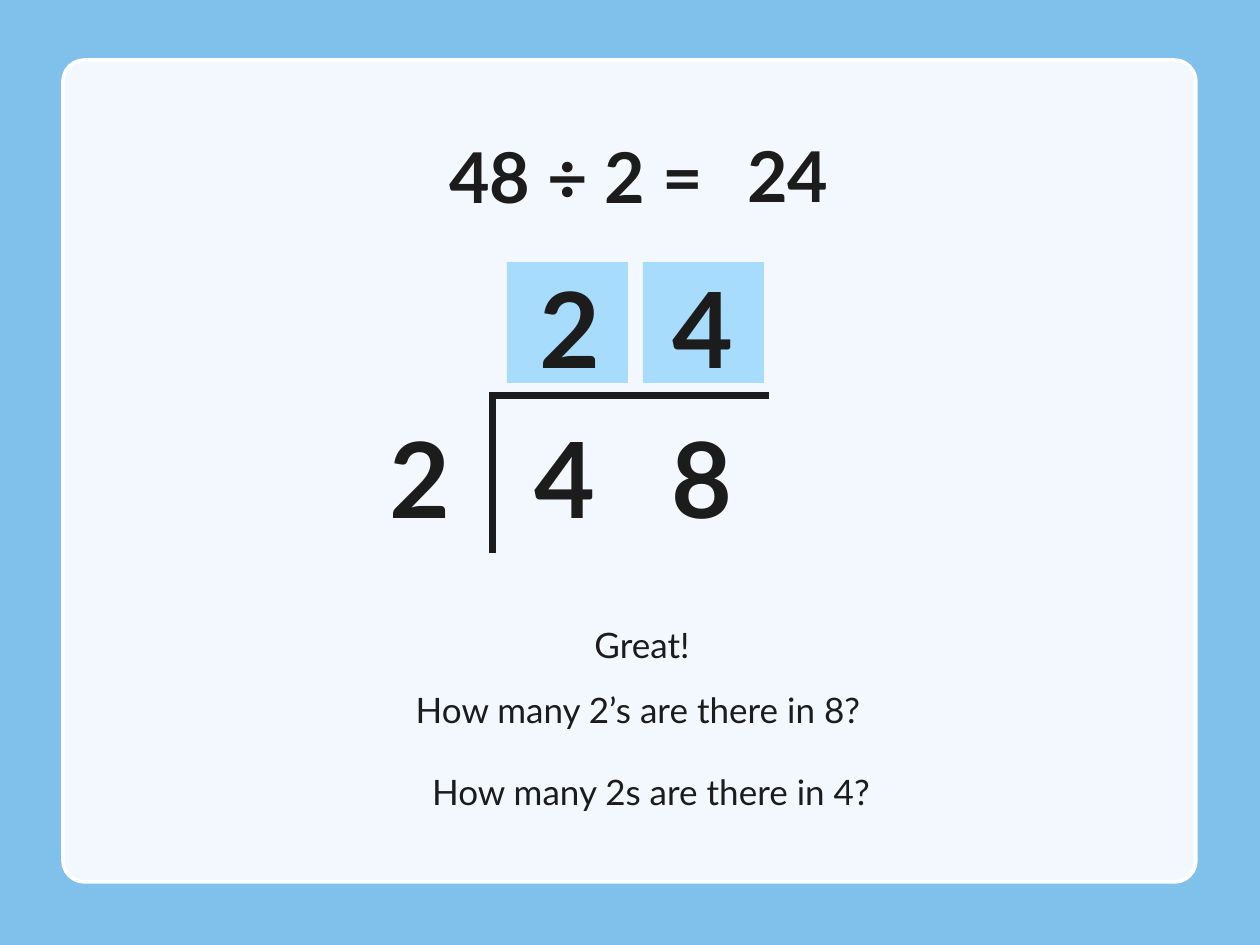
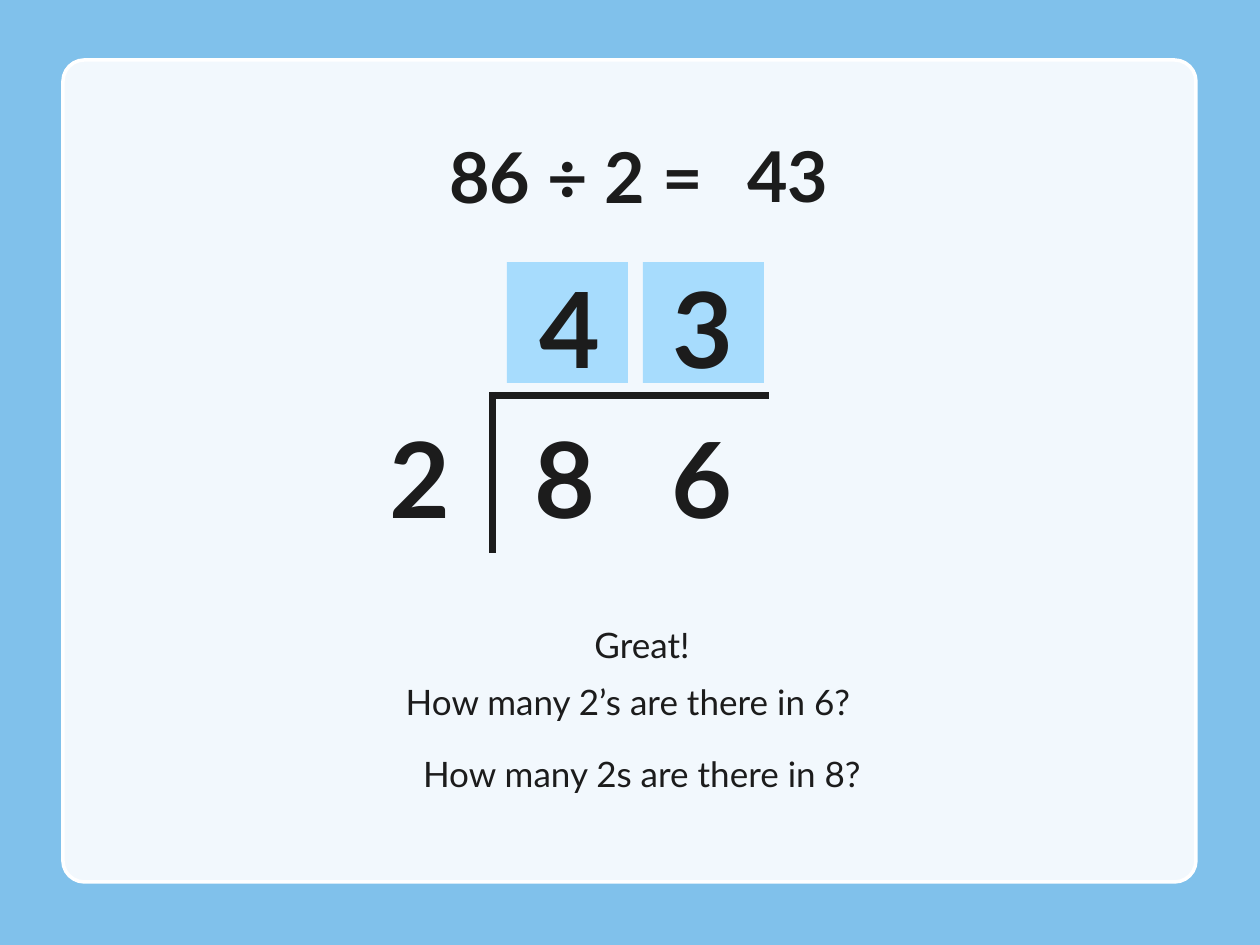
import pptx
import pptx.dml.color
import pptx.enum.shapes
import pptx.enum.text
import pptx.oxml.ns
import pptx.util
from dataclasses import dataclass
from lxml import etree

PX_PER_INCH = 126


@dataclass(frozen=True)
class Theme:
    sky: str = "80C1EB"
    card: str = "FFFFFF"
    answer: str = "A7DCFD"
    ink: str = "1C1C1C"
    font: str = "Lato"
    title_size: int = 40
    digit_size: int = 60
    prompt_size: int = 20


theme = Theme()
color = pptx.dml.color.RGBColor.from_string
qn = pptx.oxml.ns.qn
shape_kind = pptx.enum.shapes.MSO_SHAPE
alignment = pptx.enum.text.PP_ALIGN


def px(*lengths):
    """Turn pixel lengths into EMU."""
    return [pptx.util.Emu(round(length * 914400 / PX_PER_INCH)) for length in lengths]


def put_text(page, text, *, at, size, bold=False, align=alignment.CENTER, box=None):
    """Write text in a new text box, or in the given placeholder."""
    box = box or page.shapes.add_textbox(*px(*at))
    box.left, box.top, box.width, box.height = px(*at)
    frame = box.text_frame
    frame.word_wrap = True
    frame.auto_size = pptx.enum.text.MSO_AUTO_SIZE.SHAPE_TO_FIT_TEXT
    frame.vertical_anchor = pptx.enum.text.MSO_ANCHOR.TOP
    para = frame.paragraphs[0]
    para.alignment = align
    span = para.add_run()
    span.text = text
    span.font.name = theme.font
    span.font.size = pptx.util.Pt(size)
    span.font.bold = bold
    span.font.color.rgb = color(theme.ink)


deck = pptx.Presentation()
deck.slide_width, deck.slide_height = px(1260, 945)

# Shared background
sky = deck.slide_master.background.fill
sky.solid()
sky.fore_color.rgb = color(theme.sky)

# Each division: dividend, divisor, quotient, and prompts with left and top
divisions = [
    ("48", "2", "24", [
        ("Great!", 116, 617),
        ("How many 2’s are there in 8?", 112, 682),
        ("How many 2s are there in 4?", 125, 764),
    ]),
    ("86", "2", "43", [
        ("Great!", 116, 617),
        ("How many 2’s are there in 6?", 102, 674),
        ("How many 2s are there in 8?", 116, 746),
    ]),
]

# Left edges of the tens and ones columns
answer_lefts = [507, 643]
quotient_lefts = [517, 650]
dividend_lefts = [512, 649]
divisor_left = 367
quotient_top, dividend_top = 257, 407
digit_width, digit_height = 105, 140

# Division bracket: start x, start y, end x, end y
bracket = [(493, 392, 493, 553), (490, 396, 769, 396)]

for dividend, divisor, quotient, prompts in divisions:
    page = deck.slides.add_slide(deck.slide_layouts[5])
    title = page.shapes.title

    # Translucent card behind everything
    card = page.shapes.add_shape(shape_kind.ROUNDED_RECTANGLE, *px(63, 60, 1133, 822))
    card.adjustments[0] = 0.026
    card.shadow.inherit = False
    card.fill.solid()
    card.fill.fore_color.rgb = color(theme.card)
    tint = card.fill._xPr.find(qn("a:solidFill"))[0]
    etree.SubElement(tint, qn("a:alpha"), val="90000")
    card.line.color.rgb = color(theme.card)
    card.line.width = pptx.util.Pt(2)
    title.element.addprevious(card.element)

    # Equation and its result
    put_text(page, f"{dividend} ÷ {divisor} =", at=(50, 127, 1052, 97),
             size=theme.title_size, bold=True, box=title)
    put_text(page, quotient, at=(735, 126, 107, 97),
             size=theme.title_size, bold=True, align=alignment.LEFT)

    # Answer squares
    for left in answer_lefts:
        square = page.shapes.add_shape(shape_kind.RECTANGLE, *px(left, 262, 121, 121))
        square.shadow.inherit = False
        square.fill.solid()
        square.fill.fore_color.rgb = color(theme.answer)
        square.line.fill.background()

    # Digits of the written division
    digits = [(divisor, divisor_left, dividend_top)]
    digits += [(digit, left, quotient_top) for digit, left in zip(quotient, quotient_lefts)]
    digits += [(digit, left, dividend_top) for digit, left in zip(dividend, dividend_lefts)]
    for digit, left, top in digits:
        put_text(page, digit, at=(left, top, digit_width, digit_height),
                 size=theme.digit_size, bold=True)

    # Division bracket
    for ends in bracket:
        line = page.shapes.add_connector(
            pptx.enum.shapes.MSO_CONNECTOR.STRAIGHT, *px(*ends))
        line.line.color.rgb = color(theme.ink)
        line.line.width = pptx.util.Pt(4)
        etree.SubElement(line.element.spPr, qn("a:effectLst"))

    # Prompts
    for prompt, left, top in prompts:
        put_text(page, prompt, at=(left, top, 1052, 55), size=theme.prompt_size)

deck.save("out.pptx")
